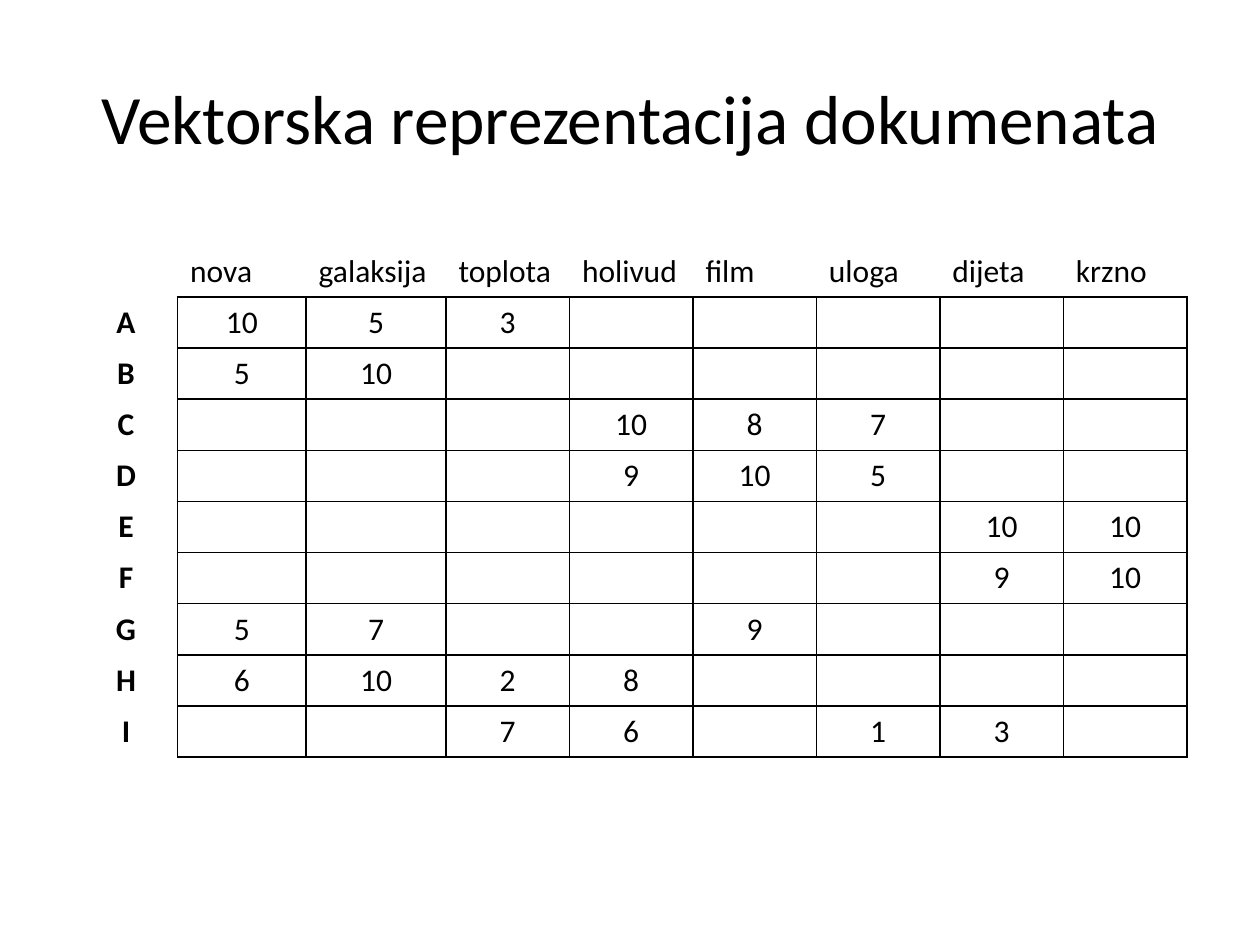
from dataclasses import dataclass

from lxml.etree import SubElement
from pptx import Presentation
from pptx.dml.color import RGBColor as RGB
from pptx.enum.text import MSO_ANCHOR as Anchor, PP_ALIGN as Align
from pptx.oxml.ns import qn
from pptx.slide import Slide
from pptx.table import _Cell as Cell
from pptx.text.text import TextFrame
from pptx.util import Inches, Pt


@dataclass(frozen=True)
class Theme:
    font: str = "Calibri"
    ink: str = "000000"
    title: float = 39.6
    body: float = 18
    border: float = 1


@dataclass(frozen=True)
class Term:
    name: str
    width: float
    weights: dict[str, int]


THEME = Theme()
DOCUMENTS = "ABCDEFGHI"
LABEL_WIDTH = 0.82
ROW_HEIGHT = 0.406
TERMS = [
    Term("nova", 1.02, {"A": 10, "B": 5, "G": 5, "H": 6}),
    Term("galaksija", 1.11, {"A": 5, "B": 10, "G": 7, "H": 10}),
    Term("toplota", 0.98, {"A": 3, "H": 2, "I": 7}),
    Term("holivud", 0.98, {"C": 10, "D": 9, "H": 8, "I": 6}),
    Term("film", 0.98, {"C": 8, "D": 10, "G": 9}),
    Term("uloga", 0.98, {"C": 7, "D": 5, "I": 1}),
    Term("dijeta", 0.98, {"E": 10, "F": 9, "I": 3}),
    Term("krzno", 0.98, {"E": 10, "F": 10}),
]


def add_run(tf: TextFrame, text: str, size: float, align: Align, bold: bool = False) -> None:
    """Add one styled run to the first paragraph of a text frame."""
    p = tf.paragraphs[0]
    p.alignment = align
    r = p.add_run()
    r.text = text
    r.font.name = THEME.font
    r.font.size = Pt(size)
    r.font.bold = bold
    r.font.color.rgb = RGB.from_string(THEME.ink)


def set_borders(cell: Cell, row: int, col: int) -> None:
    """Rule the weight grid and leave the header row and label column open."""
    edges = {
        "lnL": row and col,
        "lnR": row,
        "lnT": row and col,
        "lnB": col,
    }
    tcPr = cell._tc.get_or_add_tcPr()
    for tag, drawn in edges.items():
        ln = SubElement(tcPr, qn(f"a:{tag}"), w=str(Pt(THEME.border)))
        if drawn:
            fill = SubElement(ln, qn("a:solidFill"))
            SubElement(fill, qn("a:srgbClr"), val=THEME.ink)
        else:
            SubElement(ln, qn("a:noFill"))


def add_title(s: Slide, text: str) -> None:
    """Fill the title placeholder."""
    sp = s.shapes.title
    sp.left, sp.top = Inches(0.5), Inches(0.3)
    sp.width, sp.height = Inches(9), Inches(1.25)
    sp.text_frame.vertical_anchor = Anchor.MIDDLE
    add_run(sp.text_frame, text, THEME.title, Align.CENTER)


def add_weight_table(s: Slide, left: float, top: float) -> None:
    """Draw the weight of each term in each document."""
    widths = [LABEL_WIDTH] + [term.width for term in TERMS]
    rows = [[""] + [term.name for term in TERMS]]
    rows += [[doc] + [str(term.weights.get(doc, "")) for term in TERMS] for doc in DOCUMENTS]
    table = s.shapes.add_table(
        len(rows), len(widths), Inches(left), Inches(top),
        Inches(sum(widths)), Inches(ROW_HEIGHT * len(rows)),
    ).table
    table.first_row = table.horz_banding = False
    for column, width in zip(table.columns, widths):
        column.width = Inches(width)
    for i, texts in enumerate(rows):
        table.rows[i].height = Inches(ROW_HEIGHT)
        for j, text in enumerate(texts):
            cell = table.cell(i, j)
            set_borders(cell, i, j)
            cell.fill.background()
            if text:
                align = Align.CENTER if i else Align.LEFT
                add_run(cell.text_frame, text, THEME.body, align, bold=j == 0)


def main() -> None:
    """Build and save the slide."""
    prs = Presentation()
    prs.slide_width, prs.slide_height = Inches(10), Inches(7.5)
    s = prs.slides.add_slide(prs.slide_layouts[5])
    add_title(s, "Vektorska reprezentacija dokumenata")
    add_weight_table(s, 0.59, 1.95)
    prs.save("out.pptx")


if __name__ == "__main__":
    main()
